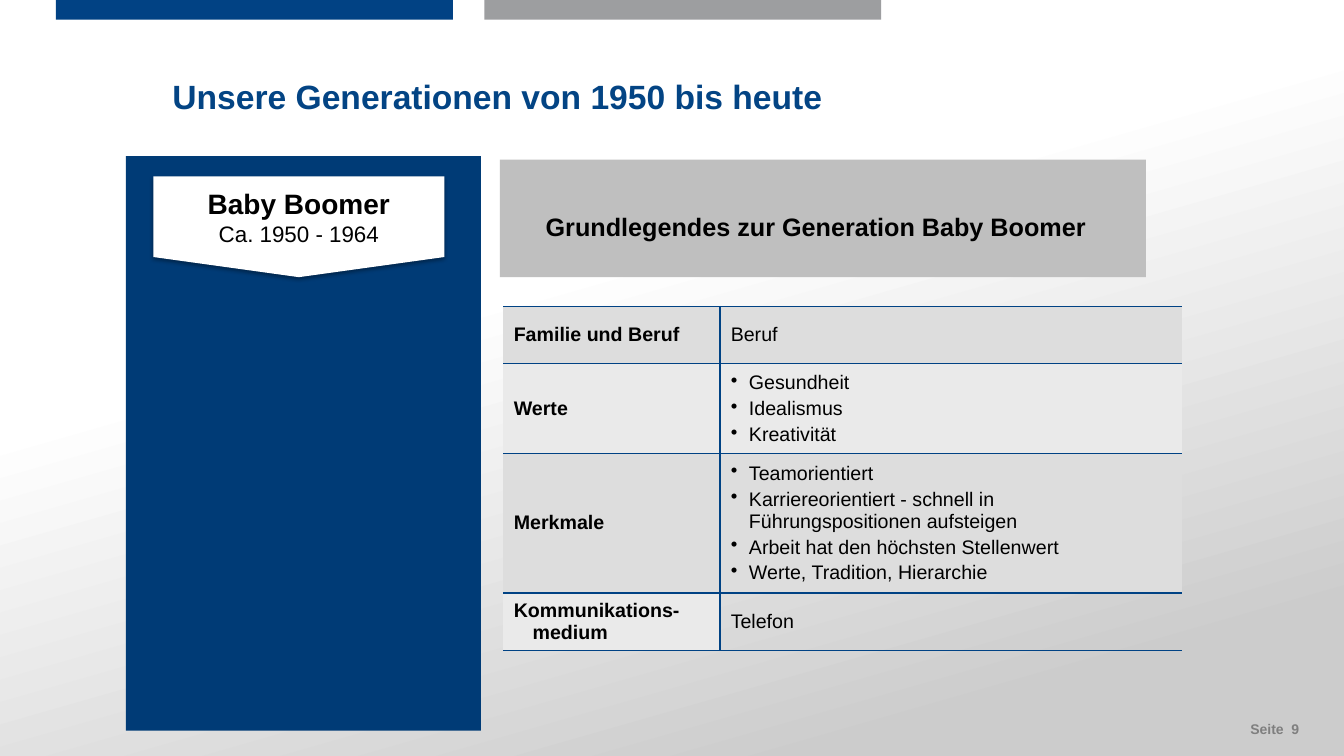
from dataclasses import dataclass

from lxml import etree
from pptx import Presentation
from pptx.dml.color import RGBColor
from pptx.enum import shapes, text
from pptx.oxml import ns
from pptx.util import Pt


@dataclass(frozen=True)
class Theme:
    font: str = "Arial"
    title_blue: str = "034484"
    bar_blue: str = "014284"
    panel_blue: str = "003B76"
    line_blue: str = "004284"
    bar_gray: str = "9D9EA0"
    heading_gray: str = "BFBFBF"
    footer_gray: str = "7F7F7F"
    fade_gray: str = "CCCCCC"
    row_dark: str = "DDDDDD"
    row_light: str = "EAEAEA"
    white: str = "FFFFFF"
    black: str = "000000"
    title_size: float = 24
    badge_size: float = 20
    heading_size: float = 18
    period_size: float = 16
    table_size: float = 14
    footer_size: float = 10


def rgb(value):
    return RGBColor.from_string(value)


def add_xml(parent, tag, **attributes):
    return etree.SubElement(parent, ns.qn(tag), attributes)


class SlideBuilder:
    def __init__(self, slide, theme):
        self.slide = slide
        self.theme = theme

    def format(self, paragraph, size, color, bold=False, align=None, spacing=None):
        font = paragraph.font
        font.name, font.size, font.bold = self.theme.font, Pt(size), bold
        font.color.rgb = rgb(color)
        paragraph.alignment = align
        paragraph.line_spacing = spacing

    def background(self, start, end, angle):
        fill = self.slide.background.fill
        fill.gradient()
        fill.gradient_angle = angle
        for stop, (position, color) in zip(fill.gradient_stops, (start, end)):
            stop.position, stop.color.rgb = position, rgb(color)

    def title(self, wording, left, top, width, height):
        shape = self.slide.shapes.title
        shape.left, shape.top, shape.width, shape.height = map(
            Pt, (left, top, width, height))
        frame = shape.text_frame
        frame.text = wording
        frame.word_wrap = True
        frame.vertical_anchor = text.MSO_ANCHOR.TOP
        self.format(frame.paragraphs[0], self.theme.title_size,
                    self.theme.title_blue, True, text.PP_ALIGN.LEFT, 1.5)

    def block(self, color, left, top, width, height,
              kind=shapes.MSO_SHAPE.RECTANGLE):
        shape = self.slide.shapes.add_shape(
            kind, Pt(left), Pt(top), Pt(width), Pt(height))
        shape.shadow.inherit = False
        shape.fill.solid()
        shape.fill.fore_color.rgb = rgb(color)
        shape.line.fill.background()
        return shape

    def centered(self, shape, lines, spacing=None):
        frame = shape.text_frame
        frame.vertical_anchor = text.MSO_ANCHOR.MIDDLE
        frame.text = "\n".join(wording for wording, _, _ in lines)
        for paragraph, (_, size, bold) in zip(frame.paragraphs, lines):
            self.format(paragraph, size, self.theme.black, bold,
                        text.PP_ALIGN.CENTER, spacing)

    def drop_shadow(self, shape, blur, distance, opacity):
        effects = shape.element.spPr.find(ns.qn("a:effectLst"))
        shadow = add_xml(effects, "a:outerShdw", blurRad=str(Pt(blur)),
                         dist=str(Pt(distance)), dir="5400000", rotWithShape="0")
        color = add_xml(shadow, "a:srgbClr", val=self.theme.black)
        add_xml(color, "a:alpha", val=str(opacity * 1000))

    def footer(self, wording, left, top, width, height):
        box = self.slide.shapes.add_textbox(Pt(left), Pt(top), Pt(width), Pt(height))
        frame = box.text_frame
        frame.word_wrap = True
        frame.margin_left = frame.margin_right = 0
        frame.margin_top = frame.margin_bottom = 0
        frame.text = wording
        self.format(frame.paragraphs[0], self.theme.footer_size,
                    self.theme.footer_gray, True, text.PP_ALIGN.RIGHT)

    def borders(self, cell, visible):
        properties = cell._tc.get_or_add_tcPr()
        for side in "LRTB":
            line = add_xml(properties, f"a:ln{side}", w=str(Pt(1)))
            if side in visible:
                fill = add_xml(line, "a:solidFill")
                add_xml(fill, "a:srgbClr", val=self.theme.line_blue)
            else:
                add_xml(line, "a:noFill")

    def cell(self, cell, lines, visible, color, bold=False, indent=0, bullet=False):
        self.borders(cell, visible)
        if color:
            cell.fill.solid()
            cell.fill.fore_color.rgb = rgb(color)
        else:
            cell.fill.background()
        cell.vertical_anchor = text.MSO_ANCHOR.MIDDLE
        cell.margin_left = cell.margin_right = Pt(7.7)
        cell.text = "\n".join(lines)
        for paragraph in cell.text_frame.paragraphs:
            self.format(paragraph, self.theme.table_size, self.theme.black, bold)
            paragraph.space_before = Pt(2.8)
            properties = paragraph._p.get_or_add_pPr()
            properties.set("marL", str(Pt(indent)))
            properties.set("indent", str(Pt(-indent)))
            if bullet:
                mark = etree.Element(ns.qn("a:buChar"), char="•")
                properties.find(ns.qn("a:defRPr")).addprevious(mark)

    def table(self, rows, left, top, widths, heights):
        frame = self.slide.shapes.add_table(
            len(rows), len(widths), Pt(left), Pt(top),
            Pt(sum(widths)), Pt(sum(heights)))
        table = frame.table
        table.first_row = table.horz_banding = False
        for column, width in zip(table.columns, widths):
            column.width = Pt(width)
        for index, (label, entries, label_fill, entry_fill) in enumerate(rows):
            table.rows[index].height = Pt(heights[index])
            bullet = len(entries) > 1
            self.cell(table.cell(index, 0), [label], "RTB", label_fill,
                      bold=True, indent=13.5)
            self.cell(table.cell(index, 1), entries, "LTB", entry_fill,
                      indent=13 if bullet else 0, bullet=bullet)


def main():
    theme = Theme()
    presentation = Presentation()
    presentation.slide_width, presentation.slide_height = Pt(960), Pt(540)
    slide = presentation.slides.add_slide(presentation.slide_layouts[5])
    builder = SlideBuilder(slide, theme)

    # Backdrop, top bars and page number
    builder.background((0.38, theme.white), (0.87, theme.fade_gray), 286)
    for left, color in ((40, theme.bar_blue), (346, theme.bar_gray)):
        builder.block(color, left, 0, 283.5, 14)
    builder.footer("Seite  9", 824, 514.8, 104, 19)

    # Title
    builder.title("Unsere Generationen von 1950 bis heute", 116, 36, 546, 57.6)

    # Generation panel with badge
    builder.block(theme.panel_blue, 90, 111.5, 253.5, 410.5)
    badge = builder.block(theme.white, 109.5, 126, 208, 72,
                          shapes.MSO_SHAPE.FLOWCHART_OFFPAGE_CONNECTOR)
    builder.drop_shadow(badge, 3.1, 1.8, 35)
    builder.centered(badge, [("Baby Boomer", theme.badge_size, True),
                             ("Ca. 1950 - 1964", theme.period_size, False)])

    # Facts table
    dark, light = theme.row_dark, theme.row_light
    facts = [
        ("Familie und Beruf", ["Beruf"], dark, dark),
        ("Werte", ["Gesundheit", "Idealismus", "Kreativität"], light, light),
        ("Merkmale", ["Teamorientiert",
                      "Karriereorientiert - schnell in Führungspositionen aufsteigen",
                      "Arbeit hat den höchsten Stellenwert",
                      "Werte, Tradition, Hierarchie"], dark, dark),
        ("Kommunikations-medium", ["Telefon"], light, None),
    ]
    builder.table(facts, 359.3, 218.9, (155, 330), (41, 64, 94, 41))

    # Heading above the table
    heading = builder.block(theme.heading_gray, 357, 114, 461.5, 84)
    heading.text_frame.margin_right = Pt(17)
    builder.centered(heading, [("Grundlegendes zur Generation Baby Boomer",
                                theme.heading_size, True)], 1.5)

    presentation.save("out.pptx")


if __name__ == "__main__":
    main()
